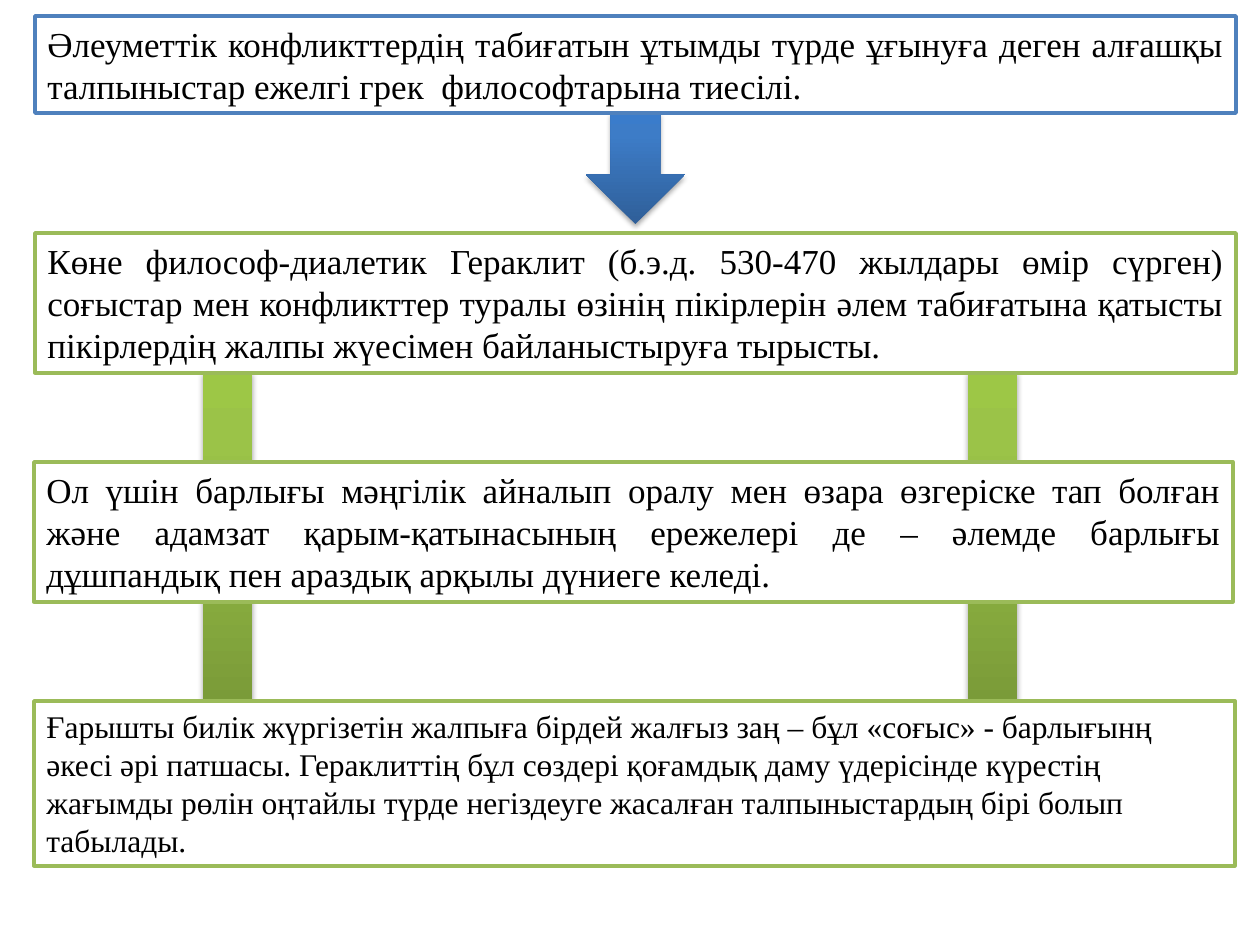
from dataclasses import dataclass

from lxml.etree import SubElement
from pptx import Presentation
from pptx.dml.color import RGBColor as RGB
from pptx.enum.shapes import MSO_SHAPE as SHAPE
from pptx.enum.text import MSO_ANCHOR as ANCHOR, MSO_AUTO_SIZE as AUTO, PP_ALIGN as ALIGN
from pptx.oxml.ns import qn
from pptx.util import Emu, Pt

EMU_PER_PX = 914400 / 126
FONT = "Times New Roman"
COLORS = {
    "white": "FFFFFF",
    "black": "000000",
    "blue": "4F81BD",
    "green": "9BBB59",
}
GRADIENTS = {
    "blue": {0: "2F5F99", 80: "3D7CC7", 100: "3A7CCB"},
    "green": {0: "779737", 80: "9BC348", 100: "9DC746"},
}


@dataclass
class Link:
    kind: SHAPE
    x: int
    y: int
    w: int
    h: int
    color: str


@dataclass
class Box:
    x: int
    y: int
    w: int
    h: int
    color: str
    text: str
    size: int = 20
    align: ALIGN = ALIGN.JUSTIFY


BARS = [Link(SHAPE.RECTANGLE, x, 372, 49, 357, "green") for x in (968, 203)]
ARROW = Link(SHAPE.DOWN_ARROW, 586, 113, 99, 111, "blue")
BOXES = [
    Box(35, 16, 1201, 97, "blue",
        "Әлеуметтік конфликттердің табиғатын ұтымды түрде ұғынуға деген алғашқы "
        "талпыныстар ежелгі грек  философтарына тиесілі."),
    Box(35, 233, 1201, 140, "green",
        "Көне философ-диалетик Гераклит (б.э.д. 530-470 жылдары өмір сүрген) "
        "соғыстар мен конфликттер туралы өзінің пікірлерін әлем табиғатына қатысты "
        "пікірлердің жалпы жүесімен байланыстыруға тырысты."),
    Box(34, 462, 1199, 140, "green",
        "Ол үшін барлығы мәңгілік айналып оралу мен өзара өзгеріске тап болған "
        "және адамзат қарым-қатынасының ережелері де – әлемде барлығы "
        "дұшпандық пен араздық арқылы дүниеге келеді."),
    Box(34, 701, 1201, 165, "green",
        "Ғарышты билік жүргізетін жалпыға бірдей жалғыз заң – бұл «соғыс» - барлығынң "
        "әкесі әрі патшасы. Гераклиттің бұл сөздері қоғамдық даму үдерісінде күрестің "
        "жағымды рөлін оңтайлы түрде негіздеуге жасалған талпыныстардың бірі болып "
        "табылады.", 18, ALIGN.LEFT),
]


def px(n: int) -> Emu:
    return Emu(round(n * EMU_PER_PX))


def rgb(name: str) -> RGB:
    return RGB.from_string(COLORS[name])


def set_attrs(obj, values: dict) -> None:
    for name, value in values.items():
        setattr(obj, name, value)


def add_base(s, kind: SHAPE, item):
    sp = s.shapes.add_shape(kind, px(item.x), px(item.y), px(item.w), px(item.h))
    sp.shadow.inherit = False
    return sp


def add_color(parent, value: str):
    return SubElement(parent, qn("a:srgbClr"), val=value)


def draw_link(s, link: Link) -> None:
    sp = add_base(s, link.kind, link)
    sp.line.fill.background()
    sp.fill.gradient()
    sp.fill.gradient_angle = 90
    props = sp._element.spPr
    stops = props.find(qn("a:gradFill")).find(qn("a:gsLst"))
    for stop in list(stops):
        stops.remove(stop)
    for pos, value in GRADIENTS[link.color].items():
        add_color(SubElement(stops, qn("a:gs"), pos=str(pos * 1000)), value)
    shadow = SubElement(props.find(qn("a:effectLst")), qn("a:outerShdw"),
                        blurRad=str(Pt(3.1)), dist=str(Pt(1.8)),
                        dir="5400000", rotWithShape="0")
    SubElement(add_color(shadow, COLORS["black"]), qn("a:alpha"), val="35000")


def draw_box(s, box: Box) -> None:
    sp = add_base(s, SHAPE.RECTANGLE, box)
    sp.fill.solid()
    sp.fill.fore_color.rgb = rgb("white")
    sp.line.color.rgb = rgb(box.color)
    sp.line.width = Pt(2)
    tf = sp.text_frame
    set_attrs(tf, {"word_wrap": True, "auto_size": AUTO.SHAPE_TO_FIT_TEXT,
                   "vertical_anchor": ANCHOR.TOP})
    p = tf.paragraphs[0]
    p.alignment = box.align
    r = p.add_run()
    r.text = box.text
    set_attrs(r.font, {"name": FONT, "size": Pt(box.size)})
    r.font.color.rgb = rgb("black")


def main() -> None:
    prs = Presentation()
    set_attrs(prs, {"slide_width": px(1260), "slide_height": px(945)})
    s = prs.slides.add_slide(prs.slide_layouts[6])
    for link in [*BARS, ARROW]:
        draw_link(s, link)
    for box in BOXES:
        draw_box(s, box)
    prs.save("out.pptx")


if __name__ == "__main__":
    main()
